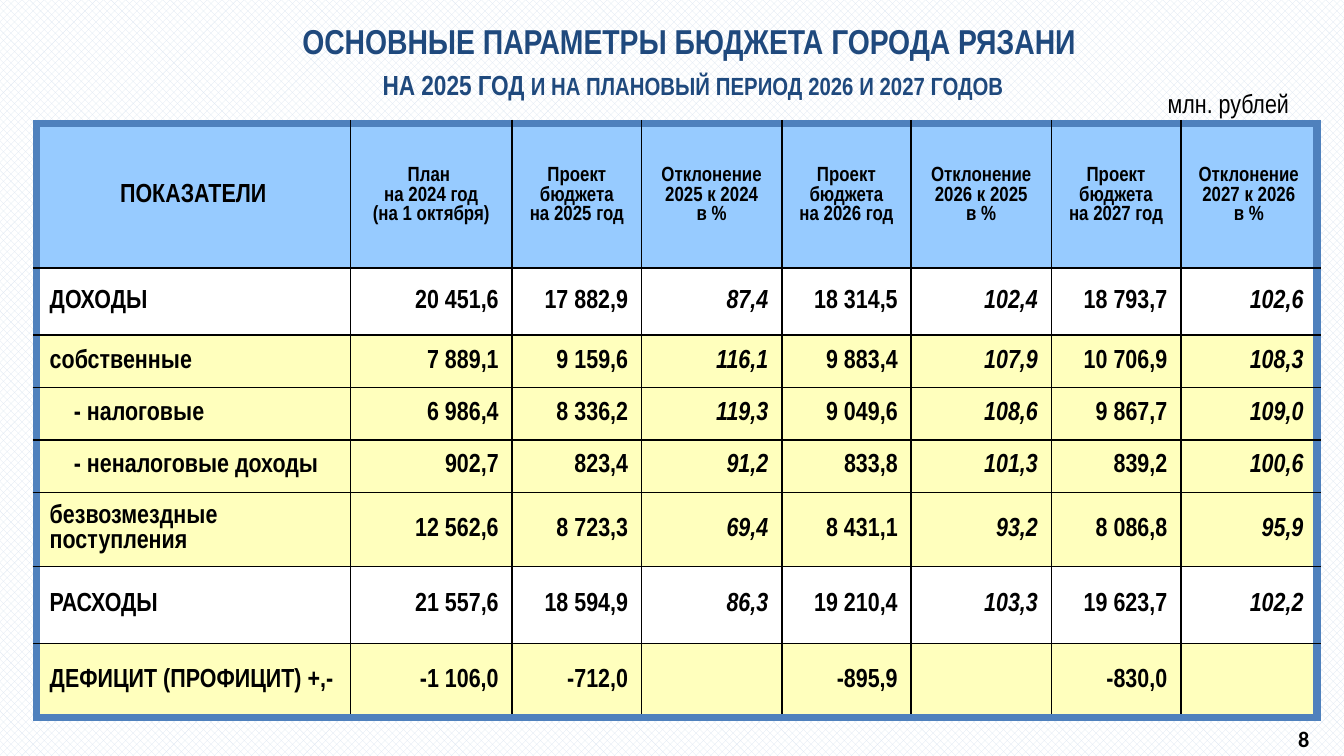
from lxml import etree
from pptx import Presentation
from pptx.dml.color import RGBColor
from pptx.enum import dml, text
from pptx.oxml import ns
from pptx.util import Inches, Pt

COLORS = {
    "ink": "000000", "title": "1F497D", "frame": "4F81BD", "header": "97CBFF",
    "main": "FFFFFF", "detail": "FFFFBD", "weave": "DCE6F2",
}
FONT = "Arial Narrow"
ALIGN = text.PP_ALIGN

COLUMN_WIDTHS = [2.33, 1.2, 0.96, 1.04, 0.96, 1.04, 0.96, 1.01]
ROW_HEIGHTS = [1.07, 0.5, 0.39, 0.39, 0.39, 0.55, 0.57, 0.55]
HEADERS = ["ПОКАЗАТЕЛИ", "План \nна 2024 год\n(на 1 октября)"]
for year in (2025, 2026, 2027):
    HEADERS += [f"Проект бюджета\nна {year} год",
                f"Отклонение\n{year} к {year - 1}\nв %"]
ROWS = [
    ["ДОХОДЫ", "20 451,6", "17 882,9", "87,4", "18 314,5", "102,4", "18 793,7", "102,6"],
    ["собственные", "7 889,1", "9 159,6", "116,1", "9 883,4", "107,9", "10 706,9", "108,3"],
    ["- налоговые", "6 986,4", "8 336,2", "119,3", "9 049,6", "108,6", "9 867,7", "109,0"],
    ["- неналоговые доходы", "902,7", "823,4", "91,2", "833,8", "101,3", "839,2", "100,6"],
    ["безвозмездные поступления", "12 562,6", "8 723,3", "69,4", "8 431,1", "93,2", "8 086,8", "95,9"],
    ["РАСХОДЫ", "21 557,6", "18 594,9", "86,3", "19 210,4", "103,3", "19 623,7", "102,2"],
    ["ДЕФИЦИТ (ПРОФИЦИТ) +,-", "-1 106,0", "-712,0", "", "-895,9", "", "-830,0", ""],
]
MAIN_ROWS = ("ДОХОДЫ", "РАСХОДЫ")


def rgb(name):
    return RGBColor.from_string(COLORS[name])


def style(font, size, color="ink", bold=True, italic=False, name=FONT):
    font.name, font.size, font.bold, font.italic = name, Pt(size), bold, italic
    font.color.rgb = rgb(color)


def set_border(cell, side, color, width):
    line = etree.SubElement(cell._tc.get_or_add_tcPr(), ns.qn(f"a:ln{side}"), w=str(Pt(width)))
    fill = etree.SubElement(line, ns.qn("a:solidFill"))
    etree.SubElement(fill, ns.qn("a:srgbClr"), val=COLORS[color])


def add_title(page, left, top, width, height):
    title = page.shapes.title
    title.left, title.top = Inches(left), Inches(top)
    title.width, title.height = Inches(width), Inches(height)
    frame = title.text_frame
    frame.auto_size = text.MSO_AUTO_SIZE.NONE
    frame.vertical_anchor = text.MSO_ANCHOR.MIDDLE
    para = frame.paragraphs[0]
    para.alignment = ALIGN.CENTER
    spans = [("ОСНОВНЫЕ ПАРАМЕТРЫ БЮДЖЕТА ГОРОДА РЯЗАНИ ", 18.5, False),
             ("на 2025 год ", 18.5, True),
             ("и на плановый период 2026 и 2027 годов", 16.6, True)]
    for index, (words, size, small_caps) in enumerate(spans):
        if index == 1:
            para.add_line_break()
        span = para.add_run()
        span.text = words
        style(span.font, size, "title")
        if small_caps:
            span._r.get_or_add_rPr().set("cap", "small")


def add_label(page, words, left, top, width, height, anchor, **look):
    box = page.shapes.add_textbox(Inches(left), Inches(top), Inches(width), Inches(height))
    box.text_frame.word_wrap = True
    box.text_frame.vertical_anchor = anchor
    para = box.text_frame.paragraphs[0]
    para.text = words
    para.alignment = ALIGN.CENTER
    style(para.font, **look)


def fill_cell(cell, words, row, column, fill):
    last_row, last_column = len(ROWS), len(HEADERS) - 1
    outer = {"L": column == 0, "R": column == last_column,
             "T": row == 0, "B": row == last_row}
    for side, on_frame in outer.items():
        set_border(cell, side, *(("frame", 4.5) if on_frame else ("ink", 1)))
    cell.fill.solid()
    cell.fill.fore_color.rgb = rgb(fill)
    cell.vertical_anchor = text.MSO_ANCHOR.MIDDLE
    cell.margin_left = Inches(0.28 if words.startswith("- ") else 0.1)
    cell.margin_right = Inches(0.1)
    cell.margin_top = cell.margin_bottom = Inches(0.04)
    cell.text = words
    is_header = row == 0
    is_deviation = not is_header and column >= 3 and column % 2 == 1
    for para in cell.text_frame.paragraphs:
        if is_header:
            para.alignment = ALIGN.CENTER
        else:
            para.alignment = ALIGN.RIGHT if column else ALIGN.LEFT
        style(para.font, 11 if is_header and column else 14, italic=is_deviation)


def add_budget_table(page, left, top, width, height):
    table = page.shapes.add_table(len(ROWS) + 1, len(HEADERS), Inches(left), Inches(top),
                                  Inches(width), Inches(height)).table
    for column, share in zip(table.columns, COLUMN_WIDTHS):
        column.width = Inches(width * share / sum(COLUMN_WIDTHS))
    for row, share in zip(table.rows, ROW_HEIGHTS):
        row.height = Inches(height * share / sum(ROW_HEIGHTS))
    for row, values in enumerate([HEADERS] + ROWS):
        fill = "header" if row == 0 else "main" if values[0] in MAIN_ROWS else "detail"
        for column, words in enumerate(values):
            fill_cell(table.cell(row, column), words, row, column, fill)


def build_budget_page(deck):
    page = deck.slides.add_slide(deck.slide_layouts[5])
    # Woven background
    backdrop = page.background.fill
    backdrop.patterned()
    backdrop.pattern = dml.MSO_PATTERN.LARGE_CHECKER_BOARD
    backdrop.fore_color.rgb = rgb("weave")
    backdrop.back_color.rgb = rgb("main")
    # Table, unit, title and page number
    add_budget_table(page, 0.27, 0.92, 9.53, 4.42)
    add_label(page, "млн. рублей", 8.47, 0.61, 1.34, 0.31,
              text.MSO_ANCHOR.MIDDLE, size=14, bold=False)
    add_title(page, 0.27, 0.14, 9.77, 0.63)
    add_label(page, "8", 9.44, 5.35, 0.52, 0.26,
              text.MSO_ANCHOR.TOP, size=11.9, name="Calibri")


def main():
    deck = Presentation()
    deck.slide_width = Inches(10)
    deck.slide_height = deck.slide_width * 9 // 16
    build_budget_page(deck)
    deck.save("out.pptx")


if __name__ == "__main__":
    main()
